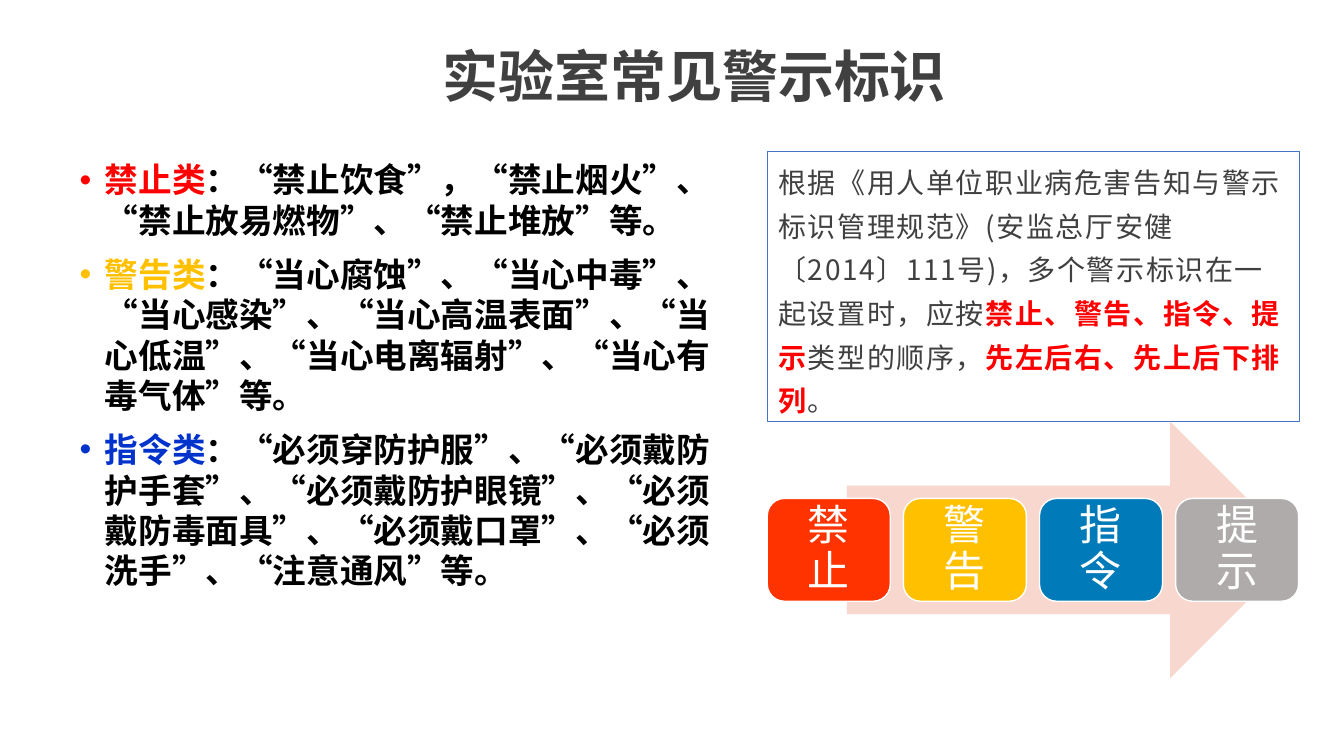
from lxml import etree
from pptx import Presentation
from pptx.dml.color import RGBColor
from pptx.enum.shapes import MSO_SHAPE
from pptx.enum.text import MSO_ANCHOR, MSO_AUTO_SIZE, PP_ALIGN
from pptx.oxml.ns import qn
from pptx.util import Inches, Pt

FONT = "Noto Sans CJK SC"
RECT = MSO_SHAPE.RECTANGLE
ROUND = MSO_SHAPE.ROUNDED_RECTANGLE
ARROW = MSO_SHAPE.RIGHT_ARROW
TOP, MIDDLE = MSO_ANCHOR.TOP, MSO_ANCHOR.MIDDLE
LEFT, CENTER = PP_ALIGN.LEFT, PP_ALIGN.CENTER
FIXED = MSO_AUTO_SIZE.NONE

TITLE = "实验室常见警示标识"
KINDS = [
    ("禁止类", "FF0000", "：“禁止饮食”，“禁止烟火”、“禁止放易燃物”、“禁止堆放”等。"),
    ("警告类", "FFC000", "：“当心腐蚀”、“当心中毒”、“当心感染”、“当心高温表面”、“当心低温”、“当心电离辐射”、“当心有毒气体”等。"),
    ("指令类", "0033CC", "：“必须穿防护服”、“必须戴防护手套”、“必须戴防护眼镜”、“必须戴防毒面具”、“必须戴口罩”、“必须洗手”、“注意通风”等。"),
]
RULE = [
    ("根据《用人单位职业病危害告知与警示标识管理规范》(安监总厅安健〔2014〕111号)，多个警示标识在一起设置时，应按", False),
    ("禁止、警告、指令、提示", True),
    ("类型的顺序，", False),
    ("先左后右、先上后下排列", True),
    ("。", False),
]
CARDS = [("禁止", "FF3300"), ("警告", "FFC000"), ("指令", "007AB9"), ("提示", "AFABAB")]


def color(code):
    return RGBColor.from_string(code)


def style(run, size, code, bold=False, space=0):
    font = run.font
    font.size, font.bold, font.name = Pt(size), bold, FONT
    font.color.rgb = color(code)
    props = run._r.get_or_add_rPr()
    props.set("lang", "zh-CN")
    if space:
        props.set("spc", str(space))
    etree.SubElement(props, qn("a:ea")).set("typeface", FONT)


def add_run(para, text, *look):
    run = para.add_run()
    run.text = text
    style(run, *look)


def place(shape, left, top, width, height):
    shape.left, shape.top = Inches(left), Inches(top)
    shape.width, shape.height = Inches(width), Inches(height)


def set_frame(frame, anchor, left, top, right, bottom):
    frame.word_wrap = True
    frame.auto_size = FIXED
    frame.vertical_anchor = anchor
    frame.margin_left, frame.margin_top = Inches(left), Inches(top)
    frame.margin_right, frame.margin_bottom = Inches(right), Inches(bottom)


def add_box(slide, kind, box, fill, line=None):
    shape = slide.shapes.add_shape(kind, *[Inches(n) for n in box])
    shape.shadow.inherit = False
    shape.fill.solid()
    shape.fill.fore_color.rgb = color(fill)
    if line:
        shape.line.color.rgb = color(line)
        shape.line.width = Pt(1)
    else:
        shape.line.fill.background()
    return shape


def add_title(slide, box):
    title = slide.shapes.title
    place(title, *box)
    frame = title.text_frame
    set_frame(frame, MIDDLE, 0.1, 0.05, 0.1, 0.05)
    frame.text = TITLE
    para = frame.paragraphs[0]
    para.alignment = CENTER
    style(para.runs[0], 40, "404040", True)


def add_list(slide, box):
    body = slide.placeholders[1]
    place(body, *box)
    frame = body.text_frame
    set_frame(frame, TOP, 0.1, 0.08, 0.1, 0.05)
    frame.text = "\n".join(name for name, code, signs in KINDS)
    for para, (name, code, signs) in zip(frame.paragraphs, KINDS):
        para.space_before = Pt(10)
        para.line_spacing = Pt(28.8)
        props = para._p.get_or_add_pPr()
        props.set("marL", str(Inches(0.25)))
        props.set("indent", str(-Inches(0.25)))
        style(para.runs[0], 24, code, True)
        add_run(para, signs, 24, "000000", True)


def add_rule(slide, box):
    shape = add_box(slide, RECT, box, "FFFFFF", "4472C4")
    frame = shape.text_frame
    set_frame(frame, TOP, 0.11, 0.04, 0.09, 0)
    para = frame.paragraphs[0]
    para.alignment = LEFT
    para.line_spacing = Pt(31.2)
    for text, strong in RULE:
        add_run(para, text, 20, "FF0000" if strong else "404040", strong, 110)


def add_order(slide, box):
    left, top, width, height = box
    inset = 0.15 * width
    add_box(slide, ARROW, (left + inset, top, width - inset, height), "F8D7CE")
    wide, tall = 1.22, 0.4 * height
    step = (width - wide) / (len(CARDS) - 1)
    for i, (name, fill) in enumerate(CARDS):
        spot = (left + i * step, top + 0.3 * height, wide, tall)
        card = add_box(slide, ROUND, spot, fill, "FFFFFF")
        frame = card.text_frame
        set_frame(frame, MIDDLE, 0.15, 0, 0.15, 0)
        frame.text = name
        para = frame.paragraphs[0]
        para.alignment = CENTER
        para.line_spacing = 0.9
        style(para.runs[0], 30, "FFFFFF")


def main():
    deck = Presentation()
    deck.slide_width, deck.slide_height = Inches(13.33), Inches(7.5)
    slide = deck.slides.add_slide(deck.slide_layouts[1])
    add_title(slide, (3.88, 0.36, 6.01, 0.77))
    add_list(slide, (0.69, 1.5, 6.49, 4.91))
    add_rule(slide, (7.61, 1.5, 5.28, 2.68))
    add_order(slide, (7.61, 4.18, 5.27, 2.55))
    deck.save("out.pptx")


if __name__ == "__main__":
    main()
